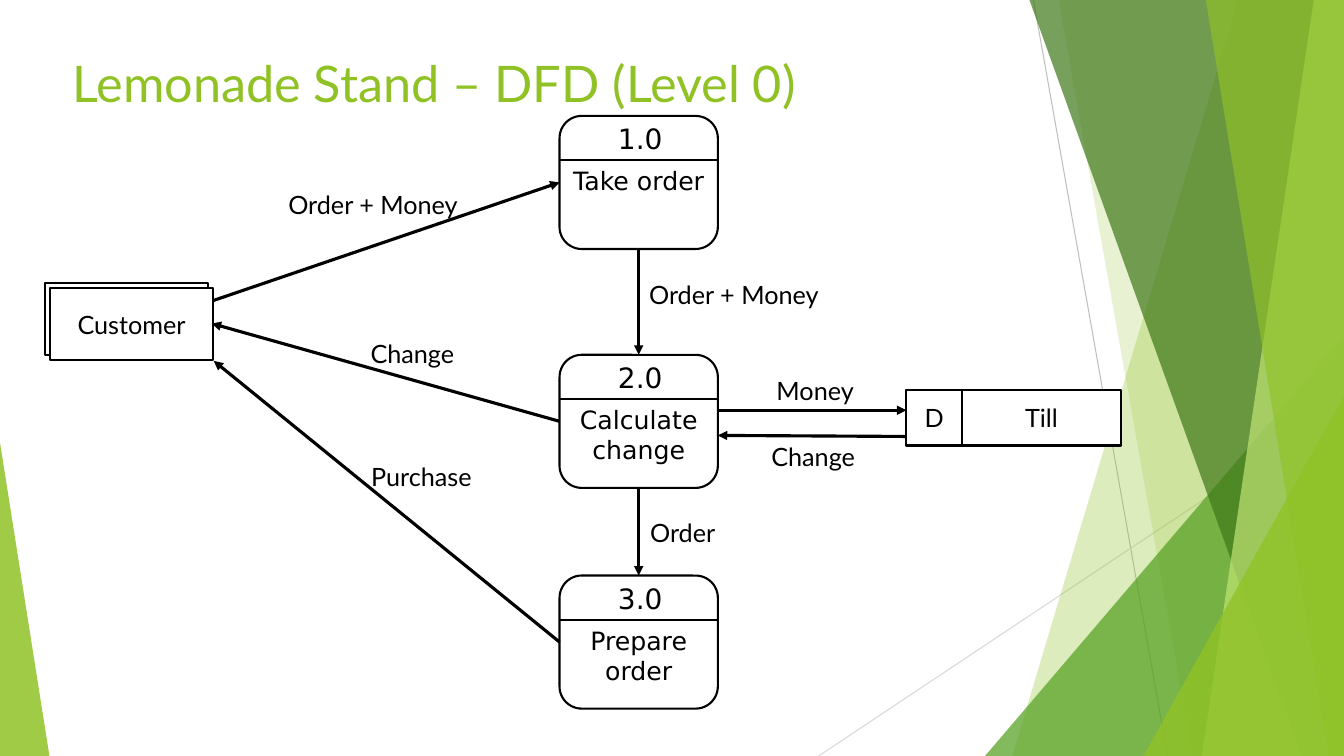
from lxml import etree
from pptx import Presentation
from pptx.dml.color import RGBColor
from pptx.enum.shapes import MSO_CONNECTOR as LINK, MSO_SHAPE as SHAPE
from pptx.enum.text import MSO_ANCHOR as ANCHOR, PP_ALIGN as ALIGN
from pptx.oxml.ns import qn
from pptx.util import Inches, Pt

WIDTH, HEIGHT = 13.33, 7.5
GREEN, BLACK, WHITE = "90C226", "000000", "FFFFFF"
BODY_FONT, PROCESS_FONT = "Lato", "DejaVu Sans"
PROCESS_WIDTH, PROCESS_HEIGHT = 1.57, 1.32


def color(code):
    return RGBColor.from_string(code)


def paint(shape, code, opacity=100):
    shape.shadow.inherit = False
    shape.fill.solid()
    shape.fill.fore_color.rgb = color(code)
    shape.line.fill.background()
    if opacity < 100:
        tint = shape.fill._xPr.find(".//" + qn("a:srgbClr"))
        etree.SubElement(tint, qn("a:alpha"), val=str(opacity * 1000))


def add_line(slide, start, end, code=BLACK, weight=1.5, arrow=False):
    line = slide.shapes.add_connector(LINK.STRAIGHT, *map(Inches, start + end))
    line.line.color.rgb = color(code)
    line.line.width = Pt(weight)
    properties = line._element.spPr
    etree.SubElement(properties, qn("a:effectLst"))
    if arrow:
        etree.SubElement(properties.find(qn("a:ln")), qn("a:tailEnd"), type="triangle")


def write(shape, text, size=18, font=BODY_FONT, code=BLACK, align=ALIGN.CENTER,
          anchor=ANCHOR.MIDDLE):
    frame = shape.text_frame
    frame.word_wrap = True
    frame.vertical_anchor = anchor
    frame.text = text
    paragraph = frame.paragraphs[0]
    paragraph.alignment = align
    paragraph.font.size = Pt(size)
    paragraph.font.name = font
    paragraph.font.color.rgb = color(code)
    return frame


def add_label(slide, box, text, **style):
    label = slide.shapes.add_textbox(*map(Inches, box))
    return write(label, text, **{"anchor": ANCHOR.TOP, **style})


def add_box(slide, box, text="", kind=SHAPE.RECTANGLE):
    outline = slide.shapes.add_shape(kind, *map(Inches, box))
    paint(outline, WHITE)
    outline.line.color.rgb = color(BLACK)
    outline.line.width = Pt(1.5)
    if text:
        write(outline, text)


def add_band(slide, top_left, bottom_left, code, opacity):
    builder = slide.shapes.build_freeform(Inches(top_left), 0, scale=1.0)
    corners = [(WIDTH, 0), (WIDTH, HEIGHT), (bottom_left, HEIGHT)]
    builder.add_line_segments([(Inches(x), Inches(y)) for x, y in corners], close=True)
    paint(builder.convert_to_shape(), code, opacity)


def add_corner(slide, left, top, width, apex, code, opacity):
    box = (left, top, width, HEIGHT - top)
    corner = slide.shapes.add_shape(SHAPE.ISOSCELES_TRIANGLE, *map(Inches, box))
    corner.adjustments[0] = apex
    paint(corner, code, opacity)


def add_backdrop(slide):
    add_line(slide, (10.25, 0), (11.58, HEIGHT), "BFBFBF", 0.75)
    add_line(slide, (WIDTH, 4.03), (8.12, HEIGHT), "D9D9D9", 0.75)
    add_band(slide, 12.28, 10.04, GREEN, 30)
    add_band(slide, 10.5, 11.83, GREEN, 20)
    add_corner(slide, 9.77, 3.33, 3.56, 1, "54A021", 72)
    add_band(slide, 10.21, 12.91, "3F7819", 70)
    add_band(slide, 13.03, 11.92, "C0E474", 70)
    add_band(slide, 11.96, 13.18, GREEN, 65)
    add_corner(slide, 11.34, 3.93, 1.99, 1, GREEN, 80)
    add_corner(slide, 0, 4.39, 0.49, 0, GREEN, 85)


def add_process(slide, left, top, number, name):
    width = PROCESS_WIDTH
    add_box(slide, (left, top, width, PROCESS_HEIGHT), kind=SHAPE.ROUNDED_RECTANGLE)
    add_line(slide, (left, top + 0.44), (left + width, top + 0.44))
    parts = [((left + 0.11, top + 0.06, width - 0.19, 0.34), number, 20),
             ((left, top + 0.49, width, 0.61), name, 18)]
    for box, text, size in parts:
        frame = add_label(slide, box, text, size=size, font=PROCESS_FONT)
        frame.margin_top = frame.margin_bottom = 0


def add_customer(slide, left, top):
    offset = 0.05
    add_box(slide, (left, top, 1.61, 0.71))
    add_box(slide, (left + offset, top + offset, 1.61, 0.71), "Customer")


def add_data_store(slide, left, top, mark, name):
    side = 0.55
    add_box(slide, (left + side, top, 1.58, side), name)
    add_box(slide, (left, top, side, side), mark)


def add_flows(slide, left):
    right, middle = left + PROCESS_WIDTH, left + PROCESS_WIDTH / 2
    flows = [
        ((2.12, 2.98), (left, 1.81), "Order + Money", (2.65, 1.83), 2.1, ALIGN.CENTER),
        ((left, 4.18), (2.1, 3.21), "Change", (3.04, 3.31), 2.1, ALIGN.CENTER),
        ((left, 6.37), (2.12, 3.58), "Purchase", (3.13, 4.53), 2.1, ALIGN.CENTER),
        ((right, 4.07), (8.99, 4.07), "Money", (7.15, 3.67), 1.87, ALIGN.CENTER),
        ((8.99, 4.33), (right, 4.32), "Change", (7.12, 4.33), 1.89, ALIGN.CENTER),
        ((middle, 2.47), (middle, 3.52), "Order + Money", (6.34, 2.72), 2.1, ALIGN.LEFT),
        ((middle, 4.84), (middle, 5.71), "Order", (6.35, 5.08), 2.1, ALIGN.LEFT),
    ]
    for start, end, text, corner, width, align in flows:
        add_line(slide, start, end, weight=2.25, arrow=True)
        add_label(slide, corner + (width, 0.4), text, align=align)


def main():
    deck = Presentation()
    deck.slide_width, deck.slide_height = Inches(WIDTH), Inches(HEIGHT)
    slide = deck.slides.add_slide(deck.slide_layouts[6])
    add_backdrop(slide)
    add_label(slide, (0.62, 0.44, 9.4, 0.76), "Lemonade Stand – DFD (Level 0)",
              size=36, code=GREEN, align=ALIGN.LEFT, anchor=ANCHOR.MIDDLE)
    process_left = 5.55
    processes = [(1.15, "1.0", "Take order"), (3.52, "2.0", "Calculate change"),
                 (5.71, "3.0", "Prepare order")]
    for top, number, name in processes:
        add_process(slide, process_left, top, number, name)
    add_customer(slide, 0.45, 2.81)
    add_data_store(slide, 8.99, 3.87, "D", "Till")
    add_flows(slide, process_left)
    deck.save("out.pptx")


if __name__ == "__main__":
    main()
